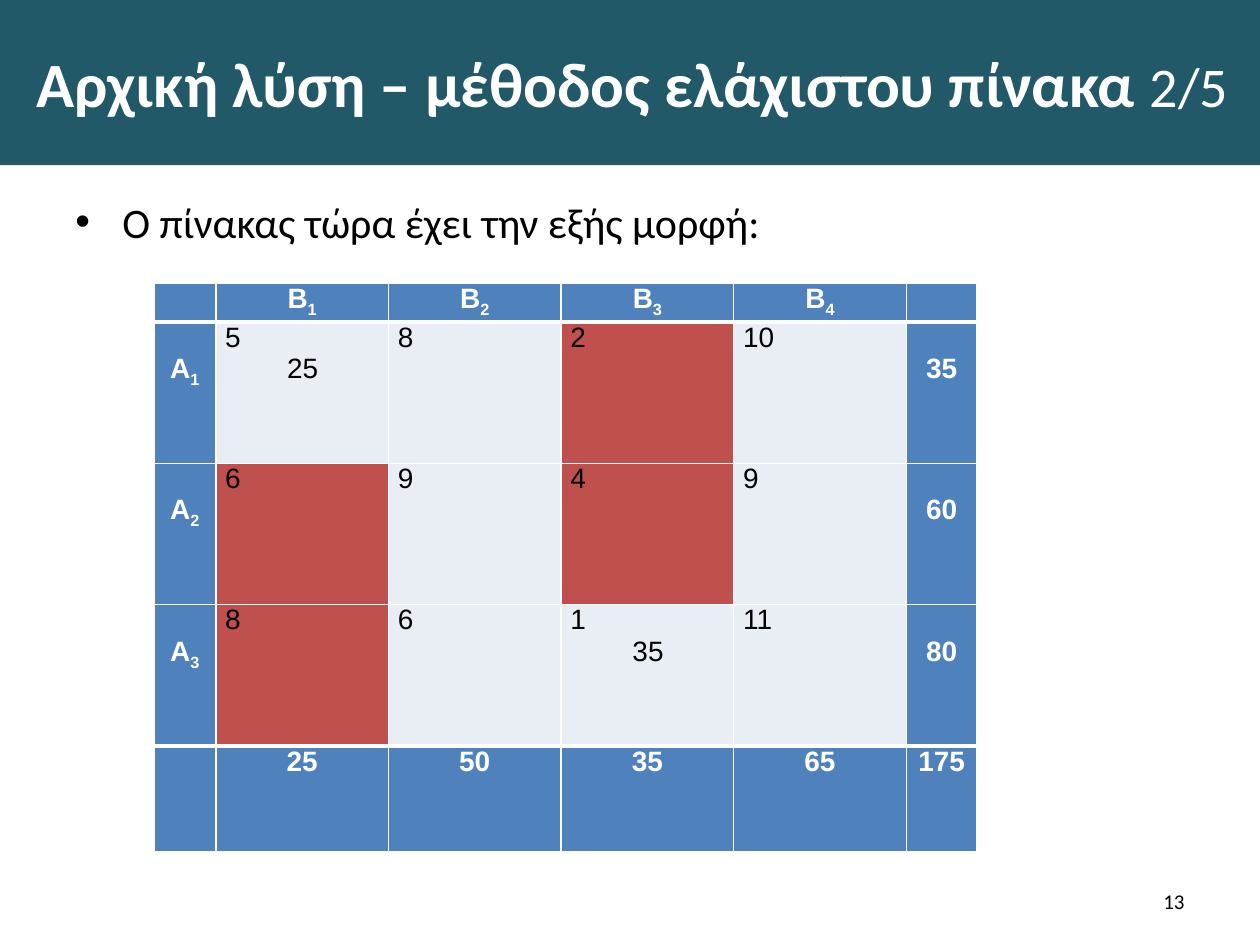
"""Build the slide with the cost table of a transport problem."""

from dataclasses import dataclass
from typing import Any, NamedTuple

from lxml import etree
from pptx import Presentation
from pptx.dml.color import RGBColor
from pptx.enum.text import MSO_ANCHOR, MSO_AUTO_SIZE, PP_ALIGN
from pptx.oxml.ns import qn
from pptx.util import Cm, Pt

LEFT, CENTER, RIGHT = PP_ALIGN.LEFT, PP_ALIGN.CENTER, PP_ALIGN.RIGHT
TOP, MIDDLE = MSO_ANCHOR.TOP, MSO_ANCHOR.MIDDLE
FIXED = MSO_AUTO_SIZE.NONE


@dataclass(frozen=True)
class Theme:
    """Colours, fonts and type sizes of the slide."""

    band: str = "215968"
    head: str = "4F81BD"
    pale: str = "E9EDF4"
    mark: str = "C0504D"
    light: str = "FFFFFF"
    dark: str = "000000"
    font: str = "Calibri"
    grid: str = "Arial"
    title: int = 36
    count: int = 32
    body: int = 24
    cell: int = 16
    page: int = 12
    thin: int = 1
    thick: int = 3


class Box(NamedTuple):
    """Place and size in centimetres."""

    left: float
    top: float
    width: float
    height: float


class Cost(NamedTuple):
    """Unit cost of a route, with its load and whether it is struck."""

    price: int
    load: str = ""
    struck: bool = False


class Source(NamedTuple):
    """Row of costs with its supply."""

    costs: tuple[Cost, ...]
    supply: int


THEME = Theme()
COLS = (1.25, 3.48, 3.48, 3.48, 3.48, 1.42)
ROWS = (0.71, 2.85, 2.85, 2.85, 2.13)
GRID = Box(3.1, 5.72, sum(COLS), sum(ROWS))
DROP = 0.63
NEEDS = (25, 50, 35, 65)
TOTAL = 175
STOCK = (
    Source((Cost(5, "25"), Cost(8), Cost(2, struck=True), Cost(10)), 35),
    Source((Cost(6, struck=True), Cost(9), Cost(4, struck=True), Cost(9)), 60),
    Source((Cost(8, struck=True), Cost(6), Cost(1, "35"), Cost(11)), 80),
)


def apply(item: Any, form: dict[str, Any]) -> None:
    """Set each named value on the item."""
    for name, value in form.items():
        setattr(item, name, value)


def place(shape: Any, box: Box) -> None:
    """Move and size a shape."""
    apply(shape, {key: Cm(size) for key, size in box._asdict().items()})


def write(para: Any, text: str, size: int, color: str,
          face: str = THEME.font, bold: bool = False) -> Any:
    """Add a run of styled text."""
    run = para.add_run()
    run.text = text
    apply(run.font, {"size": Pt(size), "name": face, "bold": bold})
    run.font.color.rgb = RGBColor.from_string(color)
    return run


def indent(para: Any, left: float, first: float = 0) -> Any:
    """Indent a paragraph and return its properties."""
    props = para._p.get_or_add_pPr()
    props.set("marL", str(Cm(left)))
    props.set("indent", str(Cm(first)))
    return props


def add_box(slide: Any, box: Box, anchor: Any) -> Any:
    """Add a wrapping text box and return its first paragraph."""
    shape = slide.shapes.add_textbox(*map(Cm, box))
    apply(shape.text_frame, {"word_wrap": True, "vertical_anchor": anchor})
    return shape.text_frame.paragraphs[0]


def edge(cell: Any, side: str, width: int) -> None:
    """Draw one border of a cell."""
    line = etree.SubElement(cell._tc.get_or_add_tcPr(), qn(f"a:ln{side}"), w=str(Pt(width)))
    fill = etree.SubElement(line, qn("a:solidFill"))
    etree.SubElement(fill, qn("a:srgbClr"), val=THEME.light)


def dress(cell: Any, row: int, color: str, drop: float = 0) -> Any:
    """Format a cell and return its first paragraph."""
    last = len(ROWS) - 1
    above = THEME.thick if row in (1, last) else THEME.thin
    below = THEME.thick if row in (0, last - 1) else THEME.thin
    for side, width in zip("LRTB", (THEME.thin, THEME.thin, above, below)):
        edge(cell, side, width)
    cell.fill.solid()
    cell.fill.fore_color.rgb = RGBColor.from_string(color)
    apply(cell, {"margin_left": Cm(0.19), "margin_right": Cm(0.19),
                 "margin_top": Cm(drop), "margin_bottom": 0, "vertical_anchor": TOP})
    return cell.text_frame.paragraphs[0]


def add_head(cell: Any, row: int, text: str = "", index: str = "", drop: float = 0) -> None:
    """Fill a blue cell with a centred label and its index."""
    para = dress(cell, row, THEME.head, drop)
    para.alignment = CENTER
    if not text:
        etree.SubElement(para._p, qn("a:endParaRPr"), sz=str(THEME.cell * 100))
        return
    style = (THEME.cell, THEME.light, THEME.grid, True)
    write(para, text, *style)
    if index:
        run = write(para, index, *style)
        run.font._element.set("baseline", "-25000")


def add_cost(cell: Any, row: int, cost: Cost) -> None:
    """Fill a route cell with its price and load."""
    para = dress(cell, row, THEME.mark if cost.struck else THEME.pale)
    style = (THEME.cell, THEME.dark, THEME.grid)
    write(para, str(cost.price), *style)
    if cost.load:
        para = cell.text_frame.add_paragraph()
        indent(para, 1.25)
        write(para, cost.load, *style)


def add_grid(slide: Any) -> None:
    """Draw the table of costs, supplies and needs."""
    table = slide.shapes.add_table(len(ROWS), len(COLS), *map(Cm, GRID)).table
    for col, width in zip(table.columns, COLS):
        col.width = Cm(width)
    for row, height in zip(table.rows, ROWS):
        row.height = Cm(height)
    end, last = len(COLS) - 1, len(ROWS) - 1
    for row, col in ((0, 0), (0, end), (last, 0)):
        add_head(table.cell(row, col), row)
    for col, need in enumerate(NEEDS, 1):
        add_head(table.cell(0, col), 0, "Β", str(col))
        add_head(table.cell(last, col), last, str(need))
    add_head(table.cell(last, end), last, str(TOTAL))
    for row, source in enumerate(STOCK, 1):
        add_head(table.cell(row, 0), row, "Α", str(row), DROP)
        add_head(table.cell(row, end), row, str(source.supply), drop=DROP)
        for col, cost in enumerate(source.costs, 1):
            add_cost(table.cell(row, col), row, cost)


def add_title(slide: Any) -> None:
    """Set the title on its dark band."""
    title = slide.shapes.title
    place(title, Box(0, 0, 25.4, 3.33))
    title.fill.solid()
    title.fill.fore_color.rgb = RGBColor.from_string(THEME.band)
    apply(title.text_frame, {"word_wrap": True, "auto_size": FIXED, "vertical_anchor": MIDDLE})
    para = title.text_frame.paragraphs[0]
    para.alignment = LEFT
    indent(para, 0.48)
    write(para, "Αρχική λύση – μέθοδος ελάχιστου πίνακα ", THEME.title, THEME.light, bold=True)
    write(para, "2/5", THEME.count, THEME.light)


def main() -> None:
    """Build and save the slide."""
    deck = Presentation()
    apply(deck, {"slide_width": Cm(25.4), "slide_height": Cm(19.05)})
    slide = deck.slides.add_slide(deck.slide_layouts[5])
    add_title(slide)
    para = add_box(slide, Box(18.21, 17.65, 5.92, 1.02), MIDDLE)
    para.alignment = RIGHT
    write(para, "13", THEME.page, THEME.dark)
    para = add_box(slide, Box(1.27, 3.73, 22.86, 1.4), TOP)
    para.line_spacing = 1.1
    props = indent(para, 0.95, -0.95)
    etree.SubElement(props, qn("a:buFont"), typeface=THEME.grid)
    etree.SubElement(props, qn("a:buChar"), char="•")
    write(para, "Ο πίνακας τώρα έχει την εξής μορφή:", THEME.body, THEME.dark)
    add_grid(slide)
    deck.save("out.pptx")


if __name__ == "__main__":
    main()
